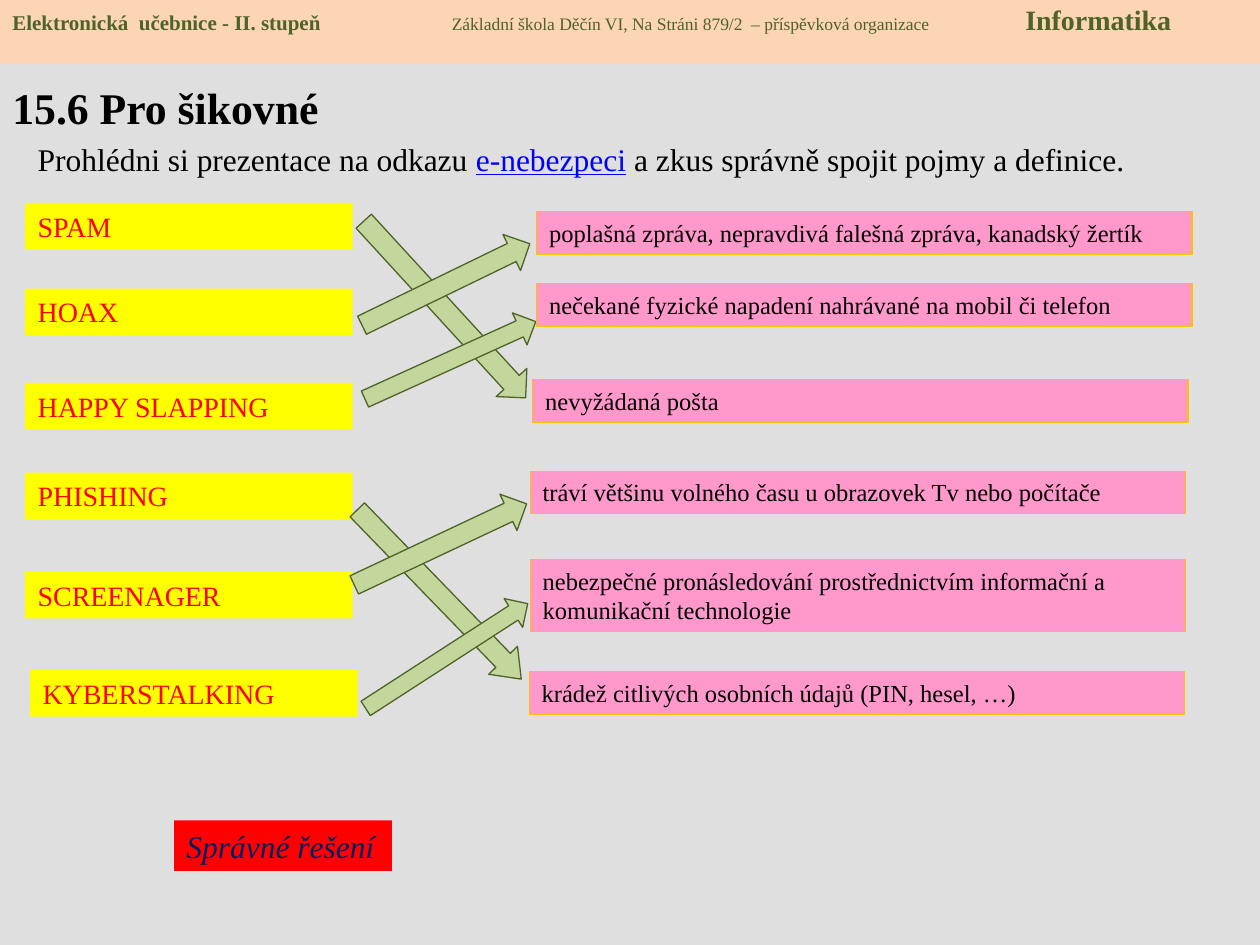
from lxml import etree
from pptx import Presentation
from pptx import util as u
from pptx.dml.color import RGBColor
from pptx.enum import shapes, text
from pptx.oxml import ns


def colour(value):
    return RGBColor.from_string(value)


class Lesson:
    FONT = "Times New Roman"
    GREEN = "4F6228"

    def __init__(self, presentation):
        layout = presentation.slide_layouts[6]
        self.slide = presentation.slides.add_slide(layout)

    def background(self, fill):
        self.slide.background.fill.solid()
        self.slide.background.fill.fore_color.rgb = colour(fill)

    def paint(self, shape, fill, line=None):
        shape.shadow.inherit = False
        shape.fill.solid()
        shape.fill.fore_color.rgb = colour(fill)
        if line:
            shape.line.color.rgb = colour(line)
            shape.line.width = u.Pt(0.75)
        else:
            shape.line.fill.background()

    def fill_text(self, shape, runs, anchor=text.MSO_ANCHOR.TOP, wrap=True):
        """Each run is a pair of its words and a dict of format values."""
        frame = shape.text_frame
        frame.word_wrap = wrap
        frame.vertical_anchor = anchor
        paragraph = frame.paragraphs[0]
        paragraph.alignment = text.PP_ALIGN.LEFT
        for words, style in runs:
            run = paragraph.add_run()
            run.text = words
            values = {"name": self.FONT, **style}
            run.font.color.rgb = colour(values.pop("color", "000000"))
            values["size"] = u.Pt(values["size"])
            for name, value in values.items():
                setattr(run.font, name, value)
        return paragraph

    def textbox(self, place, runs, **options):
        shape = self.slide.shapes.add_textbox(*map(u.Cm, place))
        return self.fill_text(shape, runs, **options)

    def box(self, place, fill, runs, line=None, **options):
        shape = self.slide.shapes.add_shape(
            shapes.MSO_SHAPE.RECTANGLE, *map(u.Cm, place))
        self.paint(shape, fill, line)
        return self.fill_text(shape, runs, **options)

    def arrow(self, place, rotation, head=0.5):
        shape = self.slide.shapes.add_shape(
            shapes.MSO_SHAPE.RIGHT_ARROW, *map(u.Cm, place))
        shape.adjustments[1] = head
        shape.rotation = rotation
        self.paint(shape, "C3D69B", self.GREEN)

    def tabs(self, paragraph, stops):
        properties = paragraph._p.get_or_add_pPr()
        tab_list = etree.SubElement(properties, ns.qn("a:tabLst"))
        for stop in stops:
            etree.SubElement(tab_list, ns.qn("a:tab"), pos=str(u.Cm(stop)), algn="l")


# Term: left, top, words
TERMS = [
    (0.51, 4.09, "SPAM"),
    (0.51, 5.82, "HOAX"),
    (0.51, 7.72, "HAPPY SLAPPING"),
    (0.51, 9.53, "PHISHING"),
    (0.51, 11.53, "SCREENAGER"),
    (0.61, 13.51, "KYBERSTALKING"),
]
# Arrow: place, rotation, head length
ARROWS = [
    ((6.55, 5.82, 4.83, 0.84), 47.5, 0.5),
    ((7.11, 5.33, 3.76, 0.81), -25.9, 0.5),
    ((7.19, 6.91, 3.78, 0.71), -24.4, 0.5),
    ((6.48, 11.58, 4.75, 0.81), 45.9, 0.65),
    ((6.96, 10.57, 3.84, 0.81), -25.2, 0.5),
    ((7.06, 12.88, 3.89, 0.69), -32.9, 0.5),
]
# Definition: left, top, height, words
DEFINITIONS = [
    (10.82, 4.27, 0.86, "poplašná zpráva, nepravdivá falešná zpráva, kanadský žertík"),
    (10.82, 5.72, 0.86, "nečekané fyzické napadení nahrávané na mobil či telefon"),
    (10.74, 7.65, 0.86, "nevyžádaná pošta"),
    (10.69, 9.5, 0.86, "tráví většinu volného času u obrazovek Tv nebo počítače"),
    (10.69, 11.28, 1.45, "nebezpečné pronásledování prostřednictvím informační a "
                         "komunikační technologie"),
    (10.67, 13.54, 0.86, "krádež citlivých osobních údajů (PIN, hesel, …)"),
]


def main():
    presentation = Presentation()
    presentation.slide_width = u.Cm(25.4)
    presentation.slide_height = u.Cm(19.05)
    lesson = Lesson(presentation)
    lesson.background("DFDFDF")

    # Header band with three columns
    green = {"color": lesson.GREEN}
    header = lesson.box((0, -0.08, 25.4, 1.37), "FCD5B5", [
        ("Elektronická  učebnice - II. stupeň\t", {**green, "size": 12, "bold": True}),
        ("Základní škola Děčín VI, Na Stráni 879/2  – příspěvková organizace\t",
         {**green, "size": 10}),
        ("Informatika", {**green, "size": 16, "bold": True}),
    ])
    lesson.tabs(header, [8.86, 20.42])

    # Title and task
    lesson.textbox((0, 1.24, 22.86, 1.83),
                   [("15.6 Pro šikovné", {"size": 25, "bold": True})],
                   anchor=text.MSO_ANCHOR.MIDDLE)
    lesson.textbox((0.51, 2.69, 23.39, 1.02), [
        ("Prohlédni si prezentace na odkazu ", {"size": 18}),
        ("e-nebezpeci", {"size": 18, "color": "0000FF", "underline": True}),
        (" a zkus správně spojit pojmy a definice.", {"size": 18}),
    ])

    # Terms, arrows and definitions
    for left, top, words in TERMS:
        lesson.box((left, top, 6.6, 0.94), "FFFF00",
                   [(words, {"size": 16, "color": "FF0000"})])
    for place, rotation, head in ARROWS:
        lesson.arrow(place, rotation, head)
    for left, top, height, words in DEFINITIONS:
        lesson.box((left, top, 13.21, height), "FF99CC",
                   [(words, {"size": 14})], line="FFC000")

    # Solution button
    lesson.box((3.51, 16.54, 4.39, 1.02), "FF0000",
               [("Správné řešení", {"size": 18, "color": "002060", "italic": True})],
               wrap=False)

    presentation.save("out.pptx")


if __name__ == "__main__":
    main()
